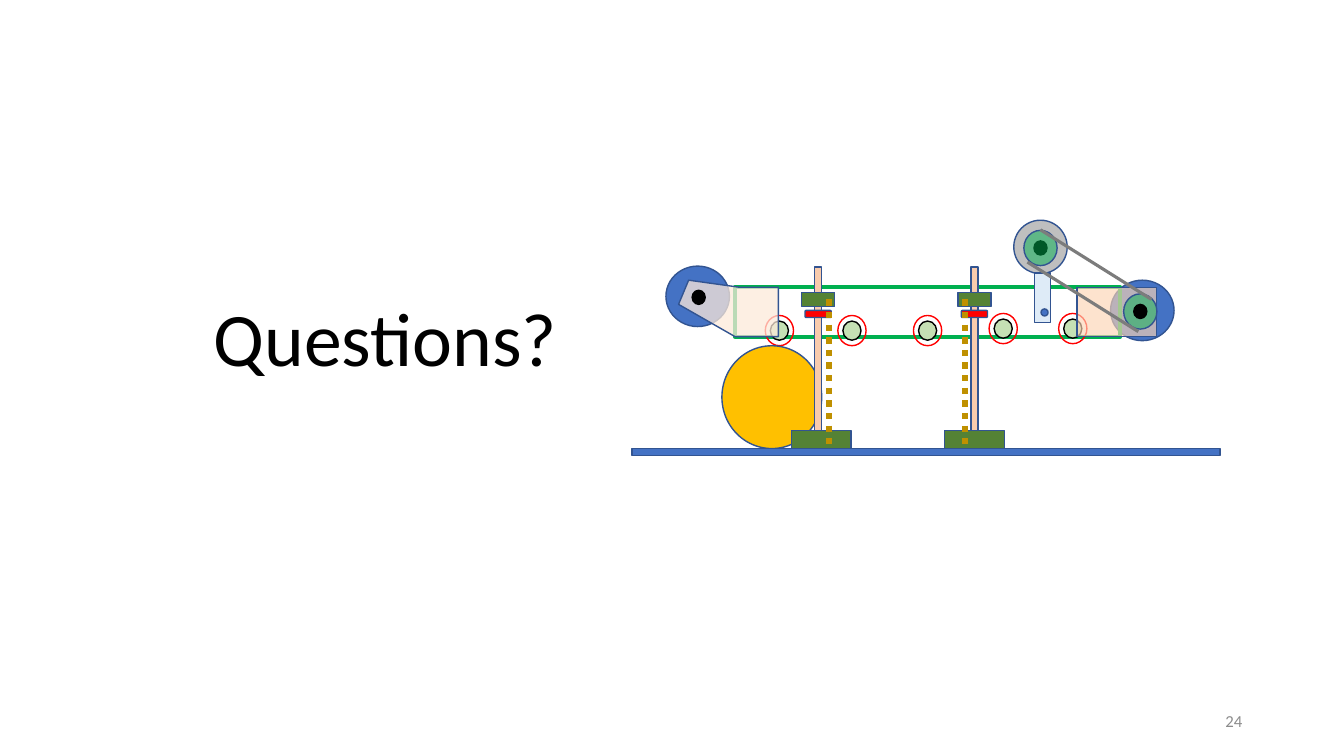
from lxml.etree import SubElement
from pptx import Presentation
from pptx.dml.color import RGBColor
from pptx.enum.dml import MSO_LINE
from pptx.enum.shapes import MSO_CONNECTOR, MSO_SHAPE
from pptx.enum.text import MSO_ANCHOR, PP_ALIGN
from pptx.oxml.ns import qn
from pptx.util import Inches, Pt

COLORS = {
    "black": "000000", "gray": "8C8C8C", "blue": "4472C4", "outline": "325491",
    "belt": "00B050", "red": "FF0000", "roller": "C5E0B4", "nose": "FDEADA",
    "housing": "FCD5B5", "motor": "BFBFBF", "bracket": "DEEBF7",
    "drive": "7C7C7C", "drum": "FFC000", "post": "F8CBAD",
    "block": "548235", "spring": "BF9000",
}
CELL = Inches(1)  # one grid column or row

# Shared levels and columns of the machine, in grid cells
BELT_TOP, BELT_H = 2.85, 0.49
GROUND_TOP, GROUND_H = 4.45, 0.07
POST_W = 0.07


def grid(*cells):
    return [round(c * CELL) for c in cells]


def rgb(name):
    return RGBColor.from_string(COLORS[name])


def paint(sp, fill, line="outline", width=1, alpha=None):
    sp.shadow.inherit = False
    if fill:
        sp.fill.solid()
        sp.fill.fore_color.rgb = rgb(fill)
        if alpha:
            color = sp.fill._xPr.find(qn("a:solidFill"))[0]
            SubElement(color, qn("a:alpha"), val=str(alpha * 1000))
    else:
        sp.fill.background()
    sp.line.color.rgb = rgb(line)
    sp.line.width = Pt(width)


def block(shapes, x, y, w, h, fill, kind=MSO_SHAPE.RECTANGLE, **style):
    sp = shapes.add_shape(kind, *grid(x, y, w, h))
    paint(sp, fill, **style)


def disc(shapes, cx, cy, w, h, fill, **style):
    block(shapes, cx - w / 2, cy - h / 2, w, h, fill, MSO_SHAPE.OVAL, **style)


def polygon(shapes, points, fill, **style):
    start, *rest = [tuple(grid(*p)) for p in points]
    builder = shapes.build_freeform(*start)
    builder.add_line_segments(rest, close=True)
    paint(builder.convert_to_shape(), fill, **style)


def line(shapes, x1, y1, x2, y2, color, width, dash=None):
    sp = shapes.add_connector(MSO_CONNECTOR.STRAIGHT, *grid(x1, y1, x2, y2))
    SubElement(sp._element.spPr, qn("a:effectLst"))
    sp.line.color.rgb = rgb(color)
    sp.line.width = Pt(width)
    if dash:
        sp.line.dash_style = dash


def roller(shapes, cx, cy):
    disc(shapes, cx, cy, 0.28, 0.3, None, line="red")
    disc(shapes, cx, cy, 0.18, 0.19, "roller", line="black")


def axle(shapes, cx, cy):
    disc(shapes, cx, cy, 0.13, 0.14, "black", line="black")


def pulley(shapes, cx, cy):
    disc(shapes, cx, cy, 0.33, 0.35, "belt", alpha=50)


def conveyor(shapes):
    # End drums, belt and support rollers
    disc(shapes, 11.33, 3.08, 0.63, 0.6, "blue")
    block(shapes, 7.29, BELT_TOP, 3.82, BELT_H, None, line="belt", width=3)
    disc(shapes, 6.92, 2.94, 0.63, 0.6, "blue")
    for cx, cy in ((8.45, 3.28), (7.73, 3.28), (9.2, 3.28), (9.95, 3.26)):
        roller(shapes, cx, cy)

    # Nose plate on the left
    bottom = BELT_TOP + BELT_H
    polygon(shapes, [(7.72, bottom), (7.29, bottom), (6.73, 3.02), (6.83, 2.78),
                     (7.33, BELT_TOP), (7.72, BELT_TOP)], "nose", alpha=74)
    axle(shapes, 6.93, 2.95)

    # Drive housing on the right
    roller(shapes, 10.64, 3.26)
    block(shapes, 10.68, BELT_TOP, 0.79, BELT_H, "housing", alpha=65)
    pulley(shapes, 11.31, 3.09)
    axle(shapes, 11.31, 3.09)


def motor(shapes):
    disc(shapes, 10.32, 2.45, 0.53, 0.53, "motor")
    axle(shapes, 10.32, 2.46)
    pulley(shapes, 10.32, 2.46)
    block(shapes, 10.26, 2.71, 0.16, BELT_H, "bracket")
    for x, y in ((10.32, 2.28), (10.19, 2.6)):
        line(shapes, x, y, x + 1.1, y + 0.69, "drive", 2.25)
    disc(shapes, 10.36, 3.1, 0.07, 0.07, "blue")


def stand(shapes, x, base_x, spring_x):
    center = x + POST_W / 2
    block(shapes, x, 2.65, POST_W, 1.87, "post")
    block(shapes, center - 0.165, 2.9, 0.33, 0.14, "block")
    block(shapes, base_x, 4.27, 0.59, 0.21, "block")
    block(shapes, center - 0.13, 3.08, 0.26, 0.07, "red",
          MSO_SHAPE.ROUNDED_RECTANGLE)
    line(shapes, spring_x, 2.97, spring_x, 4.41, "spring", 4.5,
         MSO_LINE.ROUND_DOT)


def write(sp, text, box, size, color, align, anchor):
    sp.left, sp.top, sp.width, sp.height = grid(*box)
    tf = sp.text_frame
    tf.word_wrap = True
    tf.vertical_anchor = anchor
    tf.text = text
    p = tf.paragraphs[0]
    p.alignment = align
    p.font.name = "Calibri"
    p.font.size = Pt(size)
    p.font.color.rgb = rgb(color)


def main():
    prs = Presentation()
    prs.slide_width, prs.slide_height = Inches(13.33), Inches(7.5)
    slide = prs.slides.add_slide(prs.slide_layouts[5])

    # Title and slide number
    write(slide.shapes.title, "Questions?", (2.02, 2.84, 4.25, 1.01), 54,
          "black", PP_ALIGN.LEFT, MSO_ANCHOR.TOP)
    number = slide.shapes.add_textbox(0, 0, CELL, CELL)
    write(number, "24", (9.42, 6.95, 3, 0.4), 12,
          "gray", PP_ALIGN.RIGHT, MSO_ANCHOR.MIDDLE)

    # Machine drawing
    shapes = slide.shapes.add_group_shape().shapes
    conveyor(shapes)
    motor(shapes)
    disc(shapes, 7.655, 3.94, 0.99, 1.02, "drum")
    stand(shapes, 8.08, 7.85, 8.22)
    stand(shapes, 9.63, 9.37, 9.57)
    block(shapes, 6.27, GROUND_TOP, 5.83, GROUND_H, "blue")

    prs.save("out.pptx")


if __name__ == "__main__":
    main()
